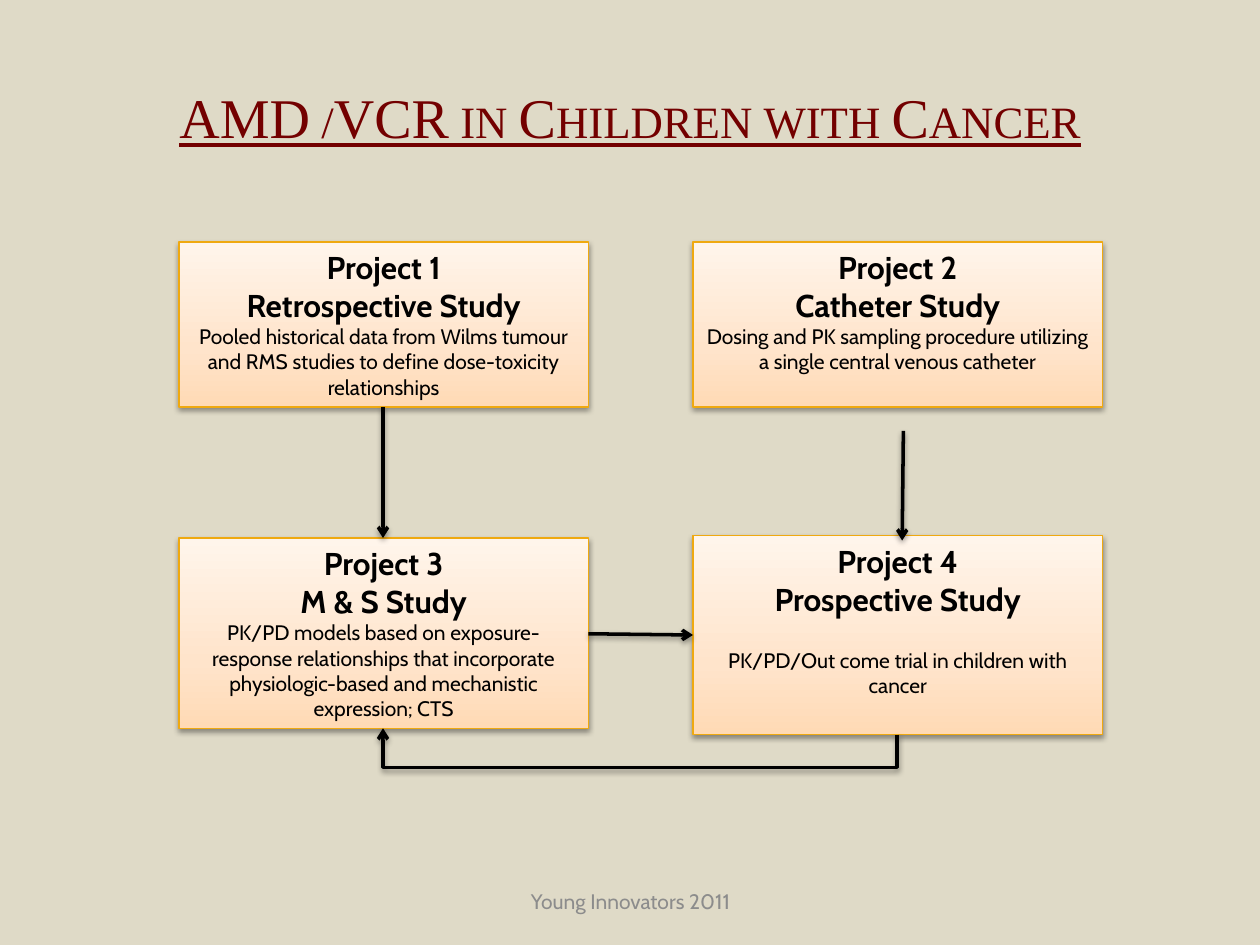
from lxml.etree import SubElement
from pptx import Presentation
from pptx.dml.color import RGBColor
from pptx.enum.shapes import MSO_CONNECTOR as Link, MSO_SHAPE as Shape
from pptx.enum.text import MSO_ANCHOR as Anchor, PP_ALIGN as Align
from pptx.oxml import parse_xml
from pptx.oxml.ns import nsdecls, qn
from pptx.util import Inches, Pt

# Content
TITLE = "AMD /VCR in Children with Cancer"
FOOTER = "Young Innovators 2011"
# Column, top, height, heading lines, description, gap above it in points
PROJECTS = [
    (0, 1.92, 1.31, ["Project 1", "Retrospective Study"],
     "Pooled historical data from Wilms tumour and RMS studies "
     "to define dose-toxicity relationships", 0),
    (1, 1.92, 1.31, ["Project 2", "Catheter Study"],
     "Dosing and PK sampling procedure utilizing a single central venous catheter", 0),
    (0, 4.27, 1.51, ["Project 3", "M & S Study"],
     "PK/PD models based on exposure-response relationships that incorporate "
     "physiologic-based and mechanistic expression; CTS", 0),
    (1, 4.25, 1.58, ["Project 4", "Prospective Study"],
     "PK/PD/Out come trial in children with cancer", 17),
]

# Theme
THEME = {
    "background": "DFDAC7", "border": "EFA910", "arrow": "000000",
    "gradient": [(0, "FFDAB5"), (35, "FFE4CB"), (100, "FFF5EB")],
    "title": {"name": "Times New Roman", "size": Pt(32), "underline": True,
              "bold": False, "color": "730000"},
    "heading": {"name": "Cabin", "size": Pt(18), "bold": True, "color": "000000"},
    "body": {"name": "Cabin", "size": Pt(12), "bold": False, "color": "000000"},
    "footer": {"name": "Cabin", "size": Pt(12), "bold": False, "color": "8C8C8C"},
}

# Grid
COLUMN_LEFT, COLUMN_STEP, BOX_WIDTH = 1.42, 4.08, 3.25
RETURN_DROP = 0.26


def write(para, text, style):
    para.alignment = Align.CENTER
    span = para.add_run()
    span.text = text
    for name, value in THEME[style].items():
        if name == "color":
            span.font.color.rgb = RGBColor.from_string(value)
        else:
            setattr(span.font, name, value)
    return span


def outline(item, color, width):
    item.line.color.rgb = RGBColor.from_string(color)
    item.line.width = Pt(width)


def add_shadow(item):
    item._element.spPr.append(parse_xml(
        f'<a:effectLst {nsdecls("a")}><a:outerShdw blurRad="40000" dist="20000" '
        'dir="5400000" rotWithShape="0"><a:srgbClr val="000000">'
        '<a:alpha val="38000"/></a:srgbClr></a:outerShdw></a:effectLst>'))


def fill_gradient(box):
    box.fill.gradient()
    box.fill.gradient_angle = 90  # counter-clockwise: first stop at the bottom
    stops = box._element.spPr.find(qn("a:gradFill")).find(qn("a:gsLst"))
    for stop in list(stops):
        stops.remove(stop)
    for position, color in THEME["gradient"]:
        stop = SubElement(stops, qn("a:gs"), pos=str(position * 1000))
        SubElement(stop, qn("a:srgbClr"), val=color)


def add_project(page, column, top, height, headings, body, gap):
    left = COLUMN_LEFT + column * COLUMN_STEP
    box = page.shapes.add_shape(Shape.RECTANGLE, Inches(left), Inches(top),
                                Inches(BOX_WIDTH), Inches(height))
    fill_gradient(box)
    outline(box, THEME["border"], 0.75)
    add_shadow(box)
    frame = box.text_frame
    frame.word_wrap = True
    frame.vertical_anchor = Anchor.TOP
    write(frame.paragraphs[0], headings[0], "heading")
    write(frame.add_paragraph(), headings[1], "heading")
    para = frame.add_paragraph()
    para.space_before = Pt(gap)
    write(para, body, "body")


def add_arrow(page, kind, start, end):
    arrow = page.shapes.add_connector(kind, *map(Inches, start + end))
    outline(arrow, THEME["arrow"], 2)
    SubElement(arrow.line._get_or_add_ln(), qn("a:tailEnd"), type="arrow")
    add_shadow(arrow)
    return arrow


def add_return_arrow(page, start, end):
    """Elbow that leaves one box bottom and enters another from below."""
    span, rise = start[0] - end[0], start[1] - end[1]
    left = (start[0] + end[0] - rise) / 2
    top = (start[1] + end[1] - span) / 2
    arrow = add_arrow(page, Link.ELBOW, (left, top), (left + rise, top + span))
    properties = arrow._element.spPr
    frame = properties.find(qn("a:xfrm"))
    frame.set("rot", "5400000")
    frame.set("flipH", "1")
    guides = properties.find(qn("a:prstGeom")).find(qn("a:avLst"))
    bend = round(-RETURN_DROP / rise * 100000)
    SubElement(guides, qn("a:gd"), name="adj1", fmla=f"val {bend}")


def main():
    deck = Presentation()
    deck.slide_width, deck.slide_height = Inches(10), Inches(7.5)
    page = deck.slides.add_slide(deck.slide_layouts[5])
    page.background.fill.solid()
    page.background.fill.fore_color.rgb = RGBColor.from_string(THEME["background"])

    # Title and footer
    title = page.shapes.title
    title.left, title.top, title.width, title.height = map(Inches, (0.5, 0.3, 9, 1.25))
    footer = page.shapes.add_textbox(*map(Inches, (3.42, 6.95, 3.17, 0.4)))
    for box, text, style in ((title, TITLE, "title"), (footer, FOOTER, "footer")):
        box.text_frame.word_wrap = True
        box.text_frame.vertical_anchor = Anchor.MIDDLE
        span = write(box.text_frame.paragraphs[0], text, style)
        if box is title:
            span.font._element.set("cap", "small")

    # Project boxes
    for project in PROJECTS:
        add_project(page, *project)

    # Arrows
    left_middle = round(COLUMN_LEFT + BOX_WIDTH / 2, 2)
    right_middle = left_middle + COLUMN_STEP
    add_arrow(page, Link.STRAIGHT, (left_middle, 3.23), (left_middle, 4.27))
    add_arrow(page, Link.STRAIGHT, (7.17, 3.42), (7.16, 4.29))
    add_arrow(page, Link.STRAIGHT, (COLUMN_LEFT + BOX_WIDTH, 5.03),
              (COLUMN_LEFT + COLUMN_STEP, 5.04))
    add_return_arrow(page, (right_middle, 5.83), (left_middle, 5.78))

    deck.save("out.pptx")


if __name__ == "__main__":
    main()
